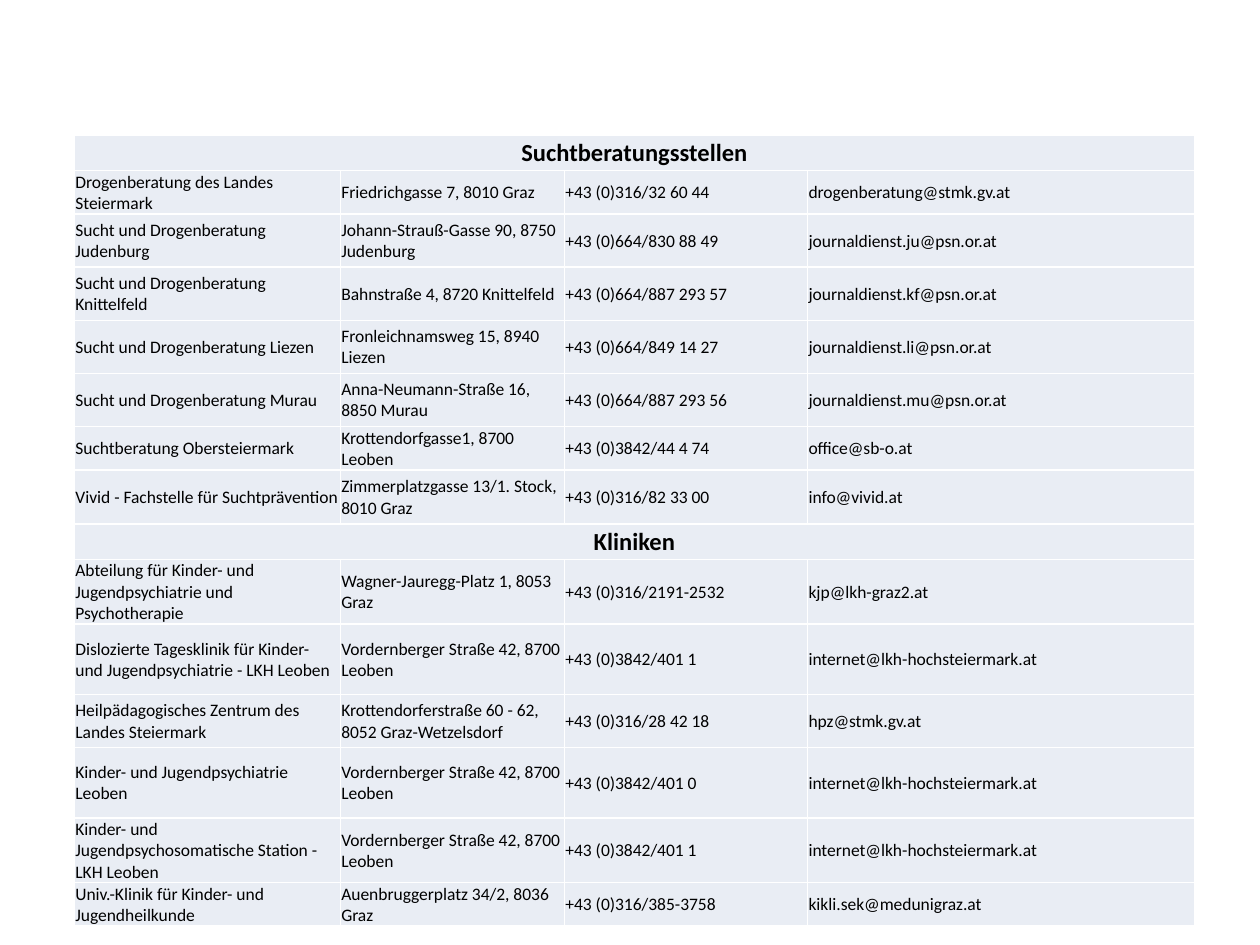
from lxml import etree
from pptx import Presentation
from pptx.dml.color import RGBColor
from pptx.enum.text import MSO_ANCHOR as Anchor, PP_ALIGN as Align
from pptx.oxml.ns import qn
from pptx.util import Cm, Pt

FONT = "Calibri"
BLACK, WHITE, PALE_BLUE = "000000", "FFFFFF", "E9EDF4"
COLUMN_WIDTHS = [5.36, 4.52, 4.9, 7.8]

# Each section: title, then rows of (height in cm, name, address, phone, e-mail)
SECTIONS = [
    ("Suchtberatungsstellen", [
        (0.86, "Drogenberatung des Landes Steiermark", "Friedrichgasse 7, 8010 Graz",
         "+43 (0)316/32 60 44", "drogenberatung@stmk.gv.at"),
        (1.07, "Sucht und Drogenberatung Judenburg", "Johann-Strauß-Gasse 90, 8750 Judenburg",
         "+43 (0)664/830 88 49", "journaldienst.ju@psn.or.at"),
        (1.07, "Sucht und Drogenberatung Knittelfeld", "Bahnstraße 4, 8720 Knittelfeld",
         "+43 (0)664/887 293 57", "journaldienst.kf@psn.or.at"),
        (1.07, "Sucht und Drogenberatung Liezen", "Fronleichnamsweg 15, 8940 Liezen",
         "+43 (0)664/849 14 27", "journaldienst.li@psn.or.at"),
        (1.07, "Sucht und Drogenberatung Murau", "Anna-Neumann-Straße 16, 8850 Murau",
         "+43 (0)664/887 293 56", "journaldienst.mu@psn.or.at"),
        (0.86, "Suchtberatung Obersteiermark", "Krottendorfgasse1, 8700 Leoben",
         "+43 (0)3842/44 4 74", "office@sb-o.at"),
        (1.09, "Vivid - Fachstelle für Suchtprävention", "Zimmerplatzgasse 13/1. Stock, 8010 Graz",
         "+43 (0)316/82 33 00", "info@vivid.at"),
    ]),
    ("Kliniken", [
        (1.27, "Abteilung für Kinder- und Jugendpsychiatrie und Psychotherapie",
         "Wagner-Jauregg-Platz 1, 8053 Graz", "+43 (0)316/2191-2532", "kjp@lkh-graz2.at"),
        (1.42, "Dislozierte Tagesklinik für Kinder- und Jugendpsychiatrie - LKH Leoben",
         "Vordernberger Straße 42, 8700 Leoben", "+43 (0)3842/401 1",
         "internet@lkh-hochsteiermark.at"),
        (1.07, "Heilpädagogisches Zentrum des Landes Steiermark",
         "Krottendorferstraße 60 - 62, 8052 Graz-Wetzelsdorf", "+43 (0)316/28 42 18",
         "hpz@stmk.gv.at"),
        (1.42, "Kinder- und Jugendpsychiatrie Leoben", "Vordernberger Straße 42, 8700 Leoben",
         "+43 (0)3842/401 0", "internet@lkh-hochsteiermark.at"),
        (1.27, "Kinder- und Jugendpsychosomatische Station - LKH Leoben",
         "Vordernberger Straße 42, 8700 Leoben", "+43 (0)3842/401 1",
         "internet@lkh-hochsteiermark.at"),
        (0.86, "Univ.-Klinik für Kinder- und Jugendheilkunde", "Auenbruggerplatz 34/2, 8036 Graz",
         "+43 (0)316/385-3758", "kikli.sek@medunigraz.at"),
    ]),
]
TITLE_HEIGHT = 0.71


def color(hex_string):
    return RGBColor.from_string(hex_string)


def write_text(cell, text, size=10, bold=False, align=Align.LEFT, margin=0.02):
    cell.vertical_anchor = Anchor.MIDDLE
    cell.margin_left = cell.margin_right = cell.margin_top = Cm(margin)
    cell.margin_bottom = 0
    paragraph = cell.text_frame.paragraphs[0]
    paragraph.alignment = align
    run = paragraph.add_run()
    run.text = text
    run.font.name = FONT
    run.font.size = Pt(size)
    run.font.bold = bold
    run.font.color.rgb = color(BLACK)


def style_cell(cell):
    """White borders on all sides and a pale fill."""
    properties = cell._tc.get_or_add_tcPr()
    for side in ("lnL", "lnR", "lnT", "lnB"):
        line = etree.SubElement(properties, qn(f"a:{side}"), w=str(Pt(1)))
        fill = etree.SubElement(line, qn("a:solidFill"))
        etree.SubElement(fill, qn("a:srgbClr"), val=WHITE)
    cell.fill.solid()
    cell.fill.fore_color.rgb = color(PALE_BLUE)


def add_contact_table(slide, left, top, sections):
    # Flatten the sections: a title row has a single text
    rows = []
    for title, contacts in sections:
        rows.append((TITLE_HEIGHT, title))
        rows.extend(contacts)

    frame = slide.shapes.add_table(
        len(rows), len(COLUMN_WIDTHS), Cm(left), Cm(top),
        Cm(sum(COLUMN_WIDTHS)), Cm(sum(row[0] for row in rows)))
    table = frame.table
    table.first_row = table.horz_banding = False
    for column, width in zip(table.columns, COLUMN_WIDTHS):
        column.width = Cm(width)

    for index, (height, *texts) in enumerate(rows):
        row = table.rows[index]
        row.height = Cm(height)
        for cell in row.cells:
            style_cell(cell)
        if len(texts) == 1:
            # Section title across the whole row
            table.cell(index, 0).merge(table.cell(index, len(COLUMN_WIDTHS) - 1))
            write_text(table.cell(index, 0), texts[0], size=14, bold=True,
                       align=Align.CENTER, margin=0)
        else:
            for cell, text in zip(row.cells, texts):
                write_text(cell, text)


def main():
    presentation = Presentation()
    presentation.slide_width, presentation.slide_height = Cm(25.4), Cm(19.05)
    slide = presentation.slides.add_slide(presentation.slide_layouts[6])
    add_contact_table(slide, 1.5, 2.73, SECTIONS)
    presentation.save("out.pptx")


if __name__ == "__main__":
    main()
